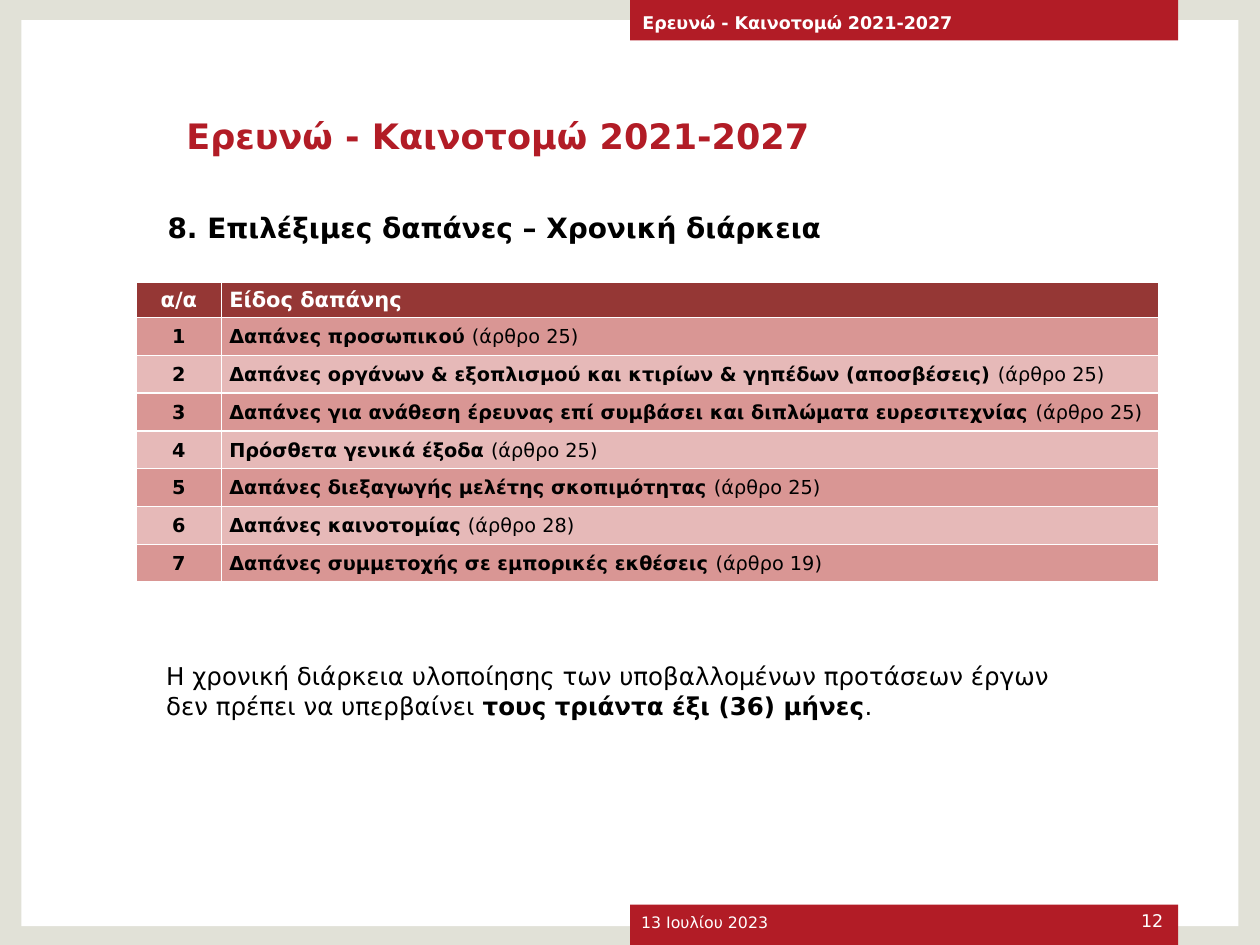
from lxml import etree
from pptx import Presentation
from pptx.dml.color import RGBColor
from pptx.enum.shapes import MSO_SHAPE
from pptx.enum.text import MSO_ANCHOR as ANCHOR, MSO_AUTO_SIZE as AUTO, PP_ALIGN as ALIGN
from pptx.oxml.ns import qn
from pptx.util import Inches, Pt

COLORS = {
    "frame": "E1E1D7", "white": "FFFFFF", "red": "B21C26", "black": "000000",
    "header": "953735", "odd": "D99694", "even": "E6B9B8",
}
FONT = "DejaVu Sans"
PROGRAMME = "Ερευνώ - Καινοτομώ 2021-2027"


def rgb(name):
    return RGBColor.from_string(COLORS[name])


def write(tf, runs, size, color, anchor=ANCHOR.TOP, align=ALIGN.LEFT):
    tf.word_wrap = True
    tf.vertical_anchor = anchor
    p = tf.paragraphs[0]
    p.alignment = align
    p.space_before = Pt(0)
    for text, bold in runs:
        r = p.add_run()
        r.text = text
        r.font.name = FONT
        r.font.size = Pt(size)
        r.font.bold = bold
        r.font.color.rgb = rgb(color)


prs = Presentation()
prs.slide_width, prs.slide_height = Inches(10), Inches(7.5)
s = prs.slides.add_slide(prs.slide_layouts[1])
title, body = s.placeholders

bands = [
    (0, 0, 10, 7.5, "frame"),
    (0.17, 0.16, 9.66, 7.19, "white"),
    (5, 7.18, 4.35, 0.32, "red"),
    (5, 0, 4.35, 0.32, "red"),
]
for i, (*box, color) in enumerate(bands):
    sp = s.shapes.add_shape(MSO_SHAPE.RECTANGLE, *map(Inches, box))
    sp.shadow.inherit = False
    sp.fill.solid()
    sp.fill.fore_color.rgb = rgb(color)
    sp.line.fill.background()
    title.element.addprevious(sp.element)

headings = [
    (title, (1.38, 0.6, 8.07, 0.95), PROGRAMME, 20, "red", ANCHOR.MIDDLE),
    (body, (1.23, 1.55, 8.21, 0.44), "8. Επιλέξιμες δαπάνες – Χρονική διάρκεια", 16, "black", ANCHOR.BOTTOM),
]
for sp, box, text, size, color, anchor in headings:
    sp.left, sp.top, sp.width, sp.height = map(Inches, box)
    sp.text_frame.auto_size = AUTO.NONE
    write(sp.text_frame, [(text, True)], size, color, anchor)
pPr = body.text_frame.paragraphs[0]._p.get_or_add_pPr()
pPr.set("marL", "0")
pPr.set("indent", "0")
etree.SubElement(pPr, qn("a:buNone"))

duration = [
    ("Η χρονική διάρκεια υλοποίησης των υποβαλλομένων προτάσεων έργων δεν πρέπει να υπερβαίνει ", False),
    ("τους τριάντα έξι (36) μήνες", True),
    (".", False),
]
labels = [
    ((4.99, 7.14, 2.33, 0.3), [("13 Ιουλίου 2023", False)], 9, "white", ANCHOR.BOTTOM, ALIGN.LEFT),
    ((5, 0.02, 4.35, 0.32), [(PROGRAMME, True)], 10, "white", ANCHOR.MIDDLE, ALIGN.LEFT),
    ((8.44, 7.14, 0.89, 0.3), [("12", False)], 10, "white", ANCHOR.BOTTOM, ALIGN.RIGHT),
    ((1.22, 5.2, 7.54, 0.57), duration, 14, "black", ANCHOR.TOP, ALIGN.LEFT),
]
for box, *style in labels:
    tf = s.shapes.add_textbox(*map(Inches, box)).text_frame
    write(tf, *style)

expenses = [
    ("Δαπάνες προσωπικού", 25),
    ("Δαπάνες οργάνων & εξοπλισμού και κτιρίων & γηπέδων (αποσβέσεις)", 25),
    ("Δαπάνες για ανάθεση έρευνας επί συμβάσει και διπλώματα ευρεσιτεχνίας", 25),
    ("Πρόσθετα γενικά έξοδα", 25),
    ("Δαπάνες διεξαγωγής μελέτης σκοπιμότητας", 25),
    ("Δαπάνες καινοτομίας", 28),
    ("Δαπάνες συμμετοχής σε εμπορικές εκθέσεις", 19),
]
rows = [([("α/α", True)], [("Είδος δαπάνης", True)])]
for n, (name, article) in enumerate(expenses, 1):
    rows.append(([(str(n), True)], [(name + " ", True), (f"(άρθρο {article})", False)]))

table = s.shapes.add_table(len(rows), 2, Inches(1.08), Inches(2.24), Inches(8.12), Inches(2.38)).table
table.columns[0].width, table.columns[1].width = Inches(0.68), Inches(7.44)
for i, row in enumerate(rows):
    table.rows[i].height = Inches(0.3 if i else 0.28)
    fill = ("even", "odd")[i % 2] if i else "header"
    size, color = (11, "black") if i else (12, "white")
    for j, runs in enumerate(row):
        cell = table.cell(i, j)
        cell.margin_left = Inches(0.06 if j else 0.01)
        cell.margin_right = cell.margin_top = Inches(0.01)
        cell.margin_bottom = 0
        tcPr = cell._tc.get_or_add_tcPr()
        for side in ("lnL", "lnR", "lnT", "lnB"):
            ln = etree.SubElement(tcPr, qn("a:" + side), w=str(Pt(1)))
            line_fill = etree.SubElement(ln, qn("a:solidFill"))
            etree.SubElement(line_fill, qn("a:srgbClr"), val=COLORS["white"])
        cell.fill.solid()
        cell.fill.fore_color.rgb = rgb(fill)
        write(cell.text_frame, runs, size, color, align=ALIGN.LEFT if j else ALIGN.CENTER)
        cell.vertical_anchor = ANCHOR.MIDDLE

prs.save("out.pptx")
